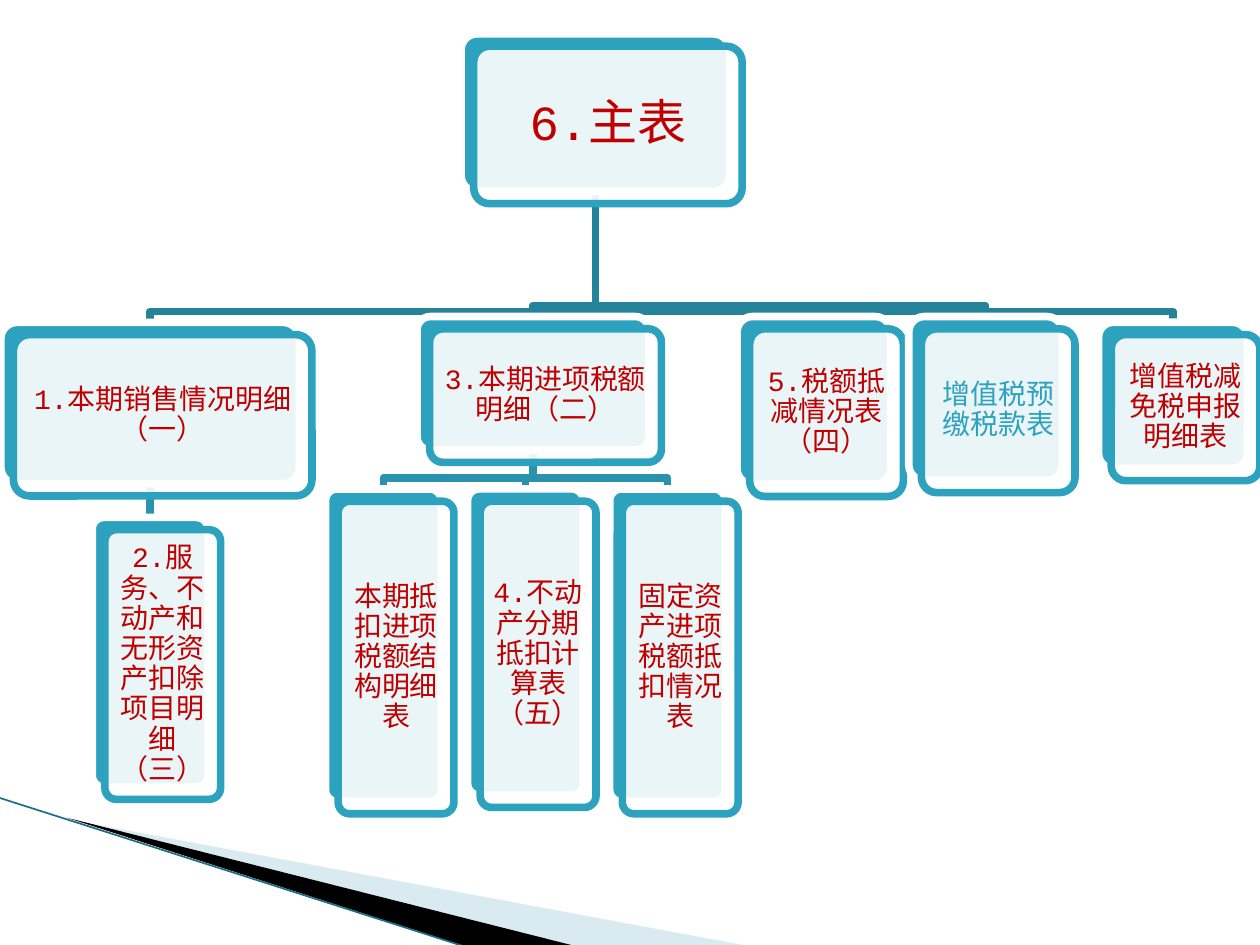
from pptx import Presentation
from pptx import util as u
from pptx.dml.color import RGBColor
from pptx.enum import shapes, text
from pptx.oxml.ns import qn
from lxml import etree

Pt = u.Pt


def paint(fmt, color, alpha=None):
    fmt.solid()
    fmt.fore_color.rgb = RGBColor.from_string(color)
    if alpha:
        clr = fmt._xPr.find(qn("a:solidFill"))[0]
        etree.SubElement(clr, qn("a:alpha"), val=str(alpha * 1000))


def freeform(points, closed):
    pts = [(Pt(x), Pt(y)) for x, y in points]
    fb = s.shapes.build_freeform(*pts[0])
    fb.add_line_segments(pts[1:], close=closed)
    sp = fb.convert_to_shape()
    sp.shadow.inherit = False
    return sp


prs = Presentation()
prs.slide_width, prs.slide_height = Pt(720), Pt(540)
s = prs.slides.add_slide(prs.slide_layouts[6])

wedges = [
    ([(39.6, 468.4), (428.4, 540.7), (328.3, 540.7)], "A0CBDC", 40),
    ([(38.2, 467.3), (329, 540.7), (267.8, 541.4)], "000000", None),
]
for points, color, alpha in wedges:
    sp = freeform(points, True)
    paint(sp.fill, color, alpha)
    sp.line.fill.background()

edge = s.shapes.add_connector(
    shapes.MSO_CONNECTOR.STRAIGHT, Pt(-0.7), Pt(455.8), Pt(267.1), Pt(541.4))
paint(edge.line.fill, "1C6E82")
edge.line.width = Pt(0.95)
etree.SubElement(edge.element.spPr, qn("a:effectLst"))

RED, TEAL = "C00000", "2DA2BF"
DX, DY, LINE = 7.2, 7, 4.33
nodes = [
    ("6.主表", None, 263.5, 19.4, 153.4, 90, RED, 8.4),
    ("1.本期销售情况明细（一）", 0, 0.5, 184.2, 170.6, 92.2, RED, 4.8),
    ("2.服务、不动产和无形资产扣除项目明细（三）", 1, 52.7, 295.7, 66.2, 154.1, RED, 8.3),
    ("3.本期进项税额明细（二）", 0, 238.3, 180.9, 132.5, 76.3, RED, 4.8),
    ("本期抵扣进项税额结构明细表", 3, 186, 279.4, 66.2, 178.6, RED, 4.8),
    ("4.不动产分期抵扣计算表（五）", 3, 267.2, 279.4, 66.2, 175, RED, 4.8),
    ("固定资产进项税额抵扣情况表", 3, 348.4, 279.4, 66.2, 178.6, RED, 4.8),
    ("5.税额抵减情况表（四）", 0, 421.2, 180.9, 87.8, 95.8, RED, 4.8),
    ("增值税预缴税款表", 0, 519.3, 180.9, 87.8, 93.6, TEAL, 4.8),
    ("增值税减免税申报明细表", 0, 627.8, 184.2, 85, 83.5, RED, 4.8),
]

backs = []
for label, parent, x, y, w, h, color, inset in nodes:
    for dx, dy, fill, alpha, line in [(0, 0, TEAL, None, "FFFFFF"),
                                      (DX, DY, "FFFFFF", 90, TEAL)]:
        sp = s.shapes.add_shape(shapes.MSO_SHAPE.ROUNDED_RECTANGLE,
                                Pt(x + dx), Pt(y + dy), Pt(w), Pt(h))
        sp.adjustments[0] = 0.1
        sp.shadow.inherit = False
        paint(sp.fill, fill, alpha)
        paint(sp.line.fill, line)
        sp.line.width = Pt(LINE)
        if not dx:
            backs.append(sp)
    tf = sp.text_frame
    tf.word_wrap = True
    tf.vertical_anchor = text.MSO_ANCHOR.MIDDLE
    tf.margin_left = tf.margin_right = Pt(inset - 0.03 * min(w, h))
    tf.margin_top = tf.margin_bottom = Pt(2.8)
    p = tf.paragraphs[0]
    p.text = label
    p.alignment = text.PP_ALIGN.CENTER
    p.line_spacing = 0.9
    p.font.size = Pt(28 if parent is None else 16)
    p.font.name = "Courier New"
    p.font.color.rgb = RGBColor.from_string(color)

for back, (_, parent, x, y, w, *_) in zip(backs, nodes):
    if parent is None:
        continue
    _, _, px, py, pw, ph, *_ = nodes[parent]
    start, end = px + pw / 2, x + w / 2
    if abs(start - end) < 1:
        link = s.shapes.add_connector(shapes.MSO_CONNECTOR.STRAIGHT,
                                      Pt(start), Pt(py + ph), Pt(end), Pt(y))
        link.begin_connect(backs[parent], 2)
        link.end_connect(back, 0)
        etree.SubElement(link.element.spPr, qn("a:effectLst"))
    else:
        bus = y - 6.2
        link = freeform([(start, py + ph), (start, bus), (end, bus), (end, y)], False)
        link.fill.background()
    paint(link.line.fill, "2993AD" if parent else "248299")
    link.line.width = Pt(LINE)
    backs[0].element.addprevious(link.element)

prs.save("out.pptx")
